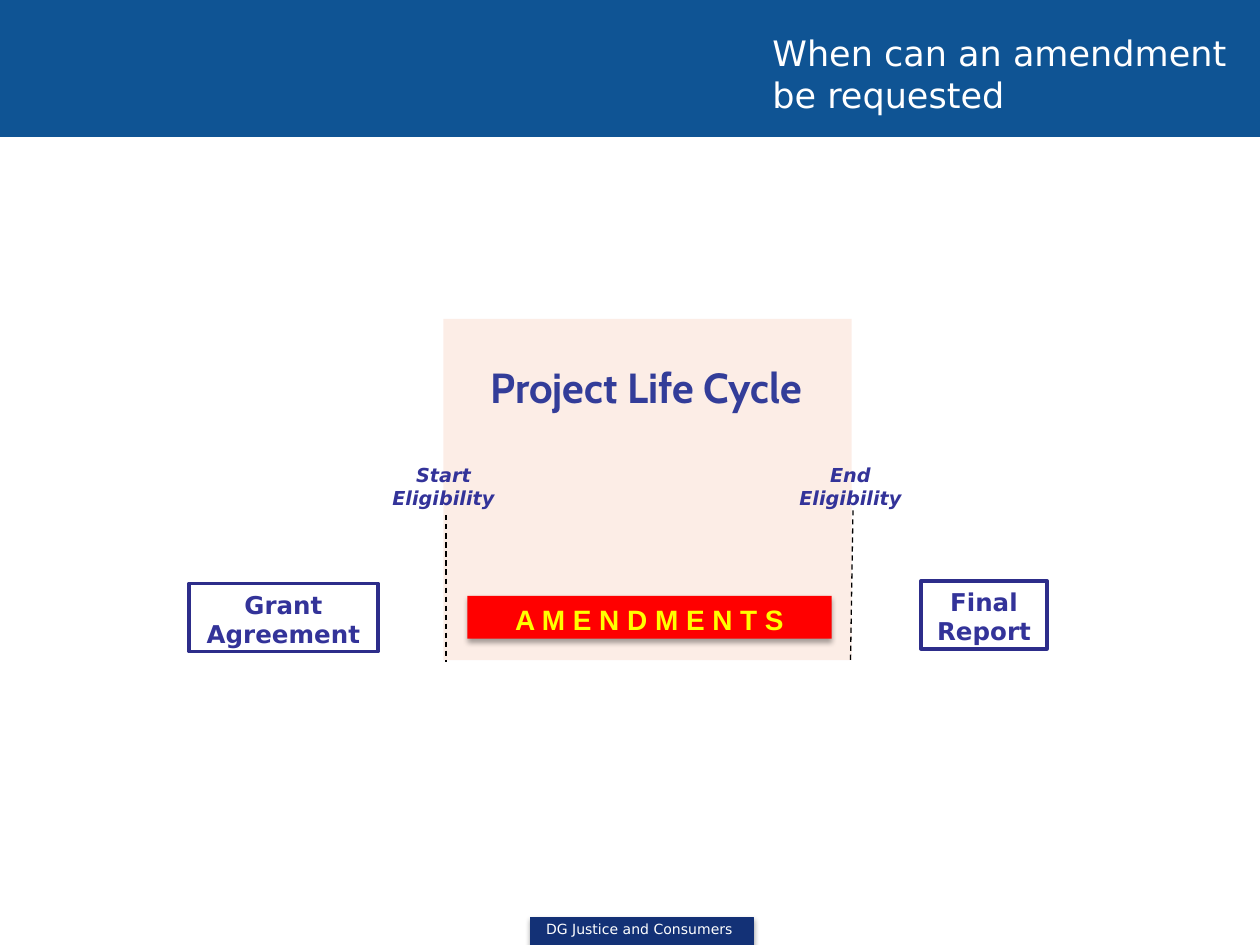
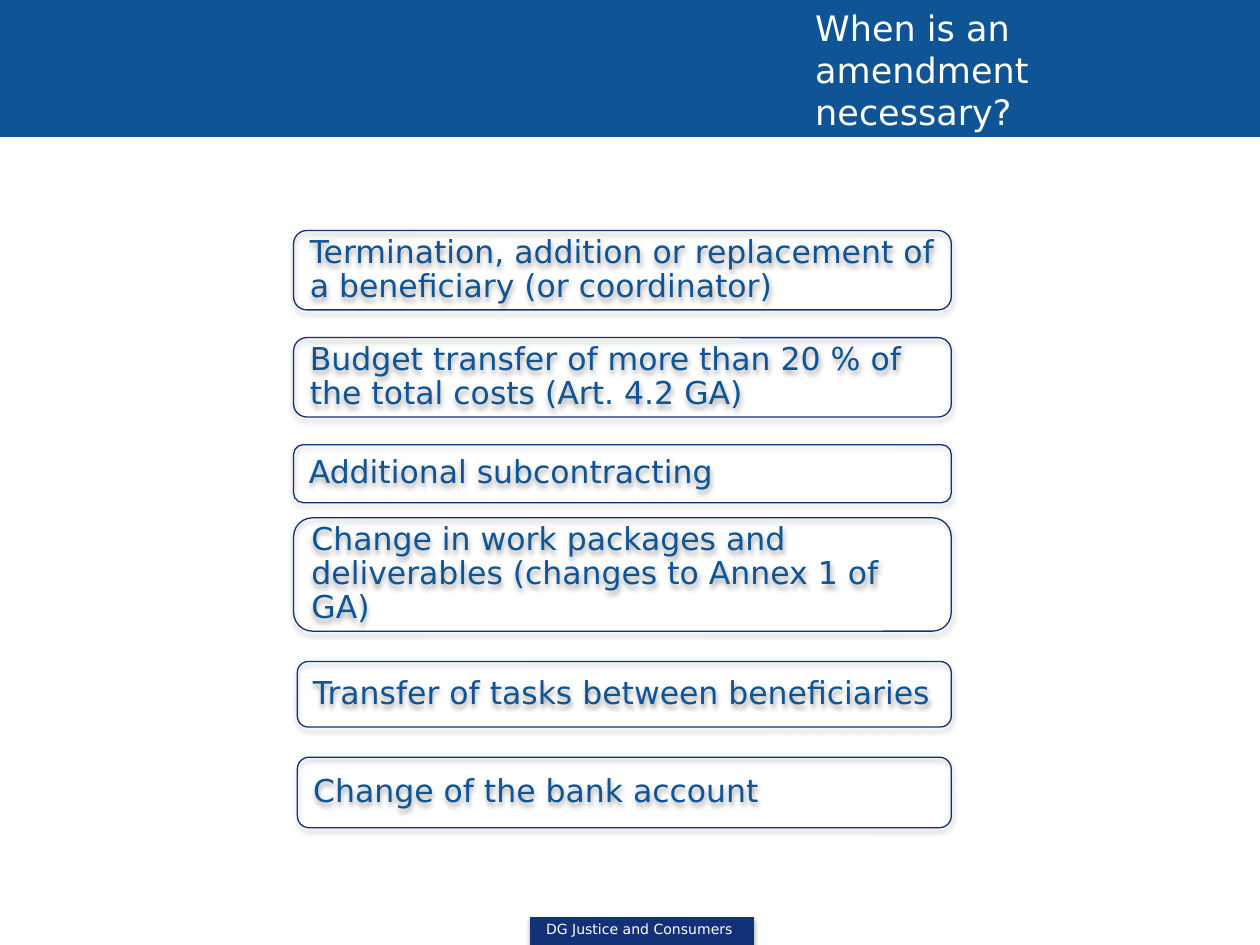
from lxml.etree import SubElement
from pptx import Presentation
from pptx.dml.color import RGBColor
from pptx.enum.dml import MSO_LINE
from pptx.enum.shapes import MSO_CONNECTOR, MSO_SHAPE
from pptx.enum.text import MSO_ANCHOR, MSO_AUTO_SIZE, PP_ALIGN
from pptx.oxml.ns import qn
from pptx.util import Inches, Pt

BLUE = RGBColor(0x0F, 0x54, 0x94)
NAVY = RGBColor(0x13, 0x31, 0x76)
INDIGO = RGBColor(0x33, 0x33, 0x99)
HEADING = RGBColor(0x33, 0x3D, 0x99)
FRAME = RGBColor(0x2D, 0x2D, 0x8A)
ORANGE = RGBColor(0xE7, 0x52, 0x13)
RED = RGBColor(0xFF, 0x00, 0x00)
YELLOW = RGBColor(0xFF, 0xFF, 0x00)
WHITE = RGBColor(0xFF, 0xFF, 0xFF)
BLACK = RGBColor(0x00, 0x00, 0x00)

SANS = "DejaVu Sans"
TITLE = {"name": SANS, "size": Pt(20), "color": WHITE}
FOOTER = {"name": SANS, "size": Pt(8), "color": WHITE}
MILESTONE = {"name": SANS, "size": Pt(14), "color": INDIGO, "bold": True}
ELIGIBILITY = {"name": SANS, "size": Pt(11), "color": INDIGO, "bold": True, "italic": True}
BANNER = {"name": "Arial", "size": Pt(16), "color": YELLOW, "bold": True}
CYCLE = {"name": "Cabin", "size": Pt(24), "color": HEADING, "bold": True}
REASON = {"name": SANS, "size": Pt(18), "color": BLUE}


def write(box, text, style, align=PP_ALIGN.CENTER, anchor=MSO_ANCHOR.TOP, wrap=True):
    frame = box.text_frame
    frame.auto_size = MSO_AUTO_SIZE.NONE
    frame.word_wrap = wrap
    frame.vertical_anchor = anchor
    frame.text = text
    for para in frame.paragraphs:
        para.alignment = align
        for name, value in style.items():
            if name == "color":
                para.font.color.rgb = value
            else:
                setattr(para.font, name, value)


def add_box(page, kind, place, fill=None, line=None, weight=0.75, shadow=False):
    box = page.shapes.add_shape(kind, *map(Inches, place))
    box.shadow.inherit = False
    if fill is None:
        box.fill.background()
    else:
        box.fill.solid()
        box.fill.fore_color.rgb = fill
    if line is None:
        box.line.fill.background()
    else:
        box.line.color.rgb = line
        box.line.width = Pt(weight)
    if shadow:
        effects = box._element.spPr.find(qn("a:effectLst"))
        outer = SubElement(effects, qn("a:outerShdw"), blurRad=str(Pt(3.1)),
                           dist=str(Pt(1.8)), dir="5400000", rotWithShape="0")
        color = SubElement(outer, qn("a:srgbClr"), val="000000")
        SubElement(color, qn("a:alpha"), val="35000")
    return box


deck = Presentation()
deck.slide_width, deck.slide_height = Inches(10), Inches(7.5)
layout = deck.slide_layouts[5]
cycle_page = deck.slides.add_slide(layout)
reason_page = deck.slides.add_slide(layout)

band = add_box(cycle_page, MSO_SHAPE.RECTANGLE, (0, 0, 10, 1.08), BLUE, BLUE)
footer_bar = add_box(cycle_page, MSO_SHAPE.RECTANGLE, (4.21, 7.28, 1.77, 0.22), NAVY, NAVY, shadow=True)
footer = cycle_page.shapes.add_textbox(Inches(3.53), Inches(7.26), Inches(3.09), Inches(0.36))
write(footer, "DG Justice and Consumers", FOOTER)
for shared in (band, footer_bar, footer):
    layout.shapes._spTree.append(shared._element)

titles = [
    (cycle_page, "When can an amendment\nbe requested", (6.03, 0.2, 3.92, 0.77), False),
    (reason_page, "When is an amendment necessary?", (6.37, 0, 3.35, 1.11), True),
]
for page, text, place, wrap in titles:
    title = page.shapes.title
    title.left, title.top, title.width, title.height = map(Inches, place)
    write(title, text, TITLE, PP_ALIGN.LEFT, wrap=wrap)

period = add_box(cycle_page, MSO_SHAPE.FLOWCHART_PROCESS, (3.52, 2.53, 3.24, 2.71), ORANGE)
period_color = period._element.spPr.find(qn("a:solidFill"))[0]
SubElement(period_color, qn("a:alpha"), val="10000")

steps = [
    ("Grant Agreement", (1.5, 4.63, 1.5, 0.54), MILESTONE, WHITE, FRAME),
    ("Final Report", (7.31, 4.61, 1, 0.54), MILESTONE, WHITE, FRAME),
    ("End Eligibility", (6.2, 3.63, 1.1, 0.41), ELIGIBILITY, None, None),
    ("Start Eligibility", (2.96, 3.63, 1.12, 0.41), ELIGIBILITY, None, None),
]
for text, place, style, fill, line in steps:
    step = add_box(cycle_page, MSO_SHAPE.FLOWCHART_PROCESS, place, fill, line, 2)
    write(step, text, style)

for start_x, start_y, end_x in ((3.54, 4.09, 3.54), (6.77, 4.05, 6.75)):
    limit = cycle_page.shapes.add_connector(
        MSO_CONNECTOR.STRAIGHT, Inches(start_x), Inches(start_y), Inches(end_x), Inches(5.25))
    limit.line.color.rgb = BLACK
    limit.line.width = Pt(0.75)
    limit.line.dash_style = MSO_LINE.DASH
    SubElement(limit._element.spPr, qn("a:effectLst"))

banner = add_box(cycle_page, MSO_SHAPE.RECTANGLE, (3.71, 4.73, 2.89, 0.34), RED, shadow=True)
write(banner, "A M E N D M E N T S", BANNER)
cycle_name = cycle_page.shapes.add_textbox(Inches(3.03), Inches(2.82), Inches(4.2), Inches(0.46))
write(cycle_name, "Project Life Cycle", CYCLE)

right_edge = 7.55
reasons = [
    ("Termination, addition or replacement of a beneficiary (or coordinator)", 2.33, 1.83, 0.63),
    ("Budget transfer of more than 20 % of the total costs (Art. 4.2 GA)", 2.33, 2.68, 0.63),
    ("Additional subcontracting", 2.33, 3.53, 0.46),
    ("Change in work packages and deliverables (changes to Annex 1 of GA)", 2.33, 4.11, 0.9),
    ("Transfer of tasks between beneficiaries", 2.36, 5.25, 0.52),
    ("Change of the bank account", 2.36, 6.01, 0.56),
]
for text, left, top, height in reasons:
    place = (left, top, right_edge - left, height)
    reason = add_box(reason_page, MSO_SHAPE.ROUNDED_RECTANGLE, place, line=NAVY, shadow=True)
    write(reason, text, REASON, PP_ALIGN.LEFT, MSO_ANCHOR.MIDDLE)
    reason.text_frame.paragraphs[0].line_spacing = 0.9

deck.save("out.pptx")
